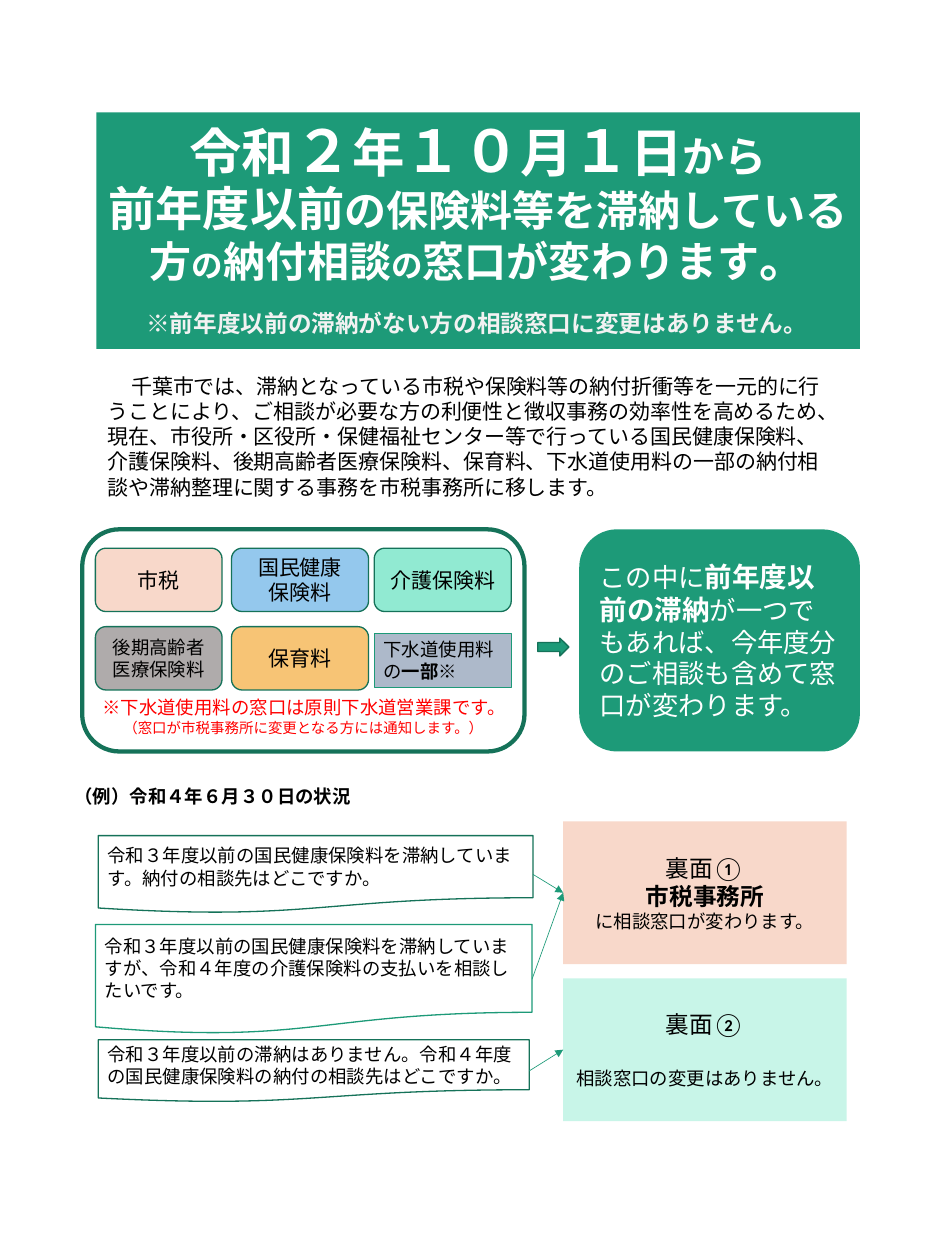
import pptx
import pptx.util
import pptx.dml.color
import pptx.enum.dml
import pptx.enum.lang
import pptx.enum.shapes
import pptx.enum.text
import pptx.oxml.ns
import lxml.etree

Pt = pptx.util.Pt
SHAPE = pptx.enum.shapes.MSO_SHAPE
ANCHOR = pptx.enum.text.MSO_ANCHOR
ALIGN = pptx.enum.text.PP_ALIGN
qn = pptx.oxml.ns.qn
COLORS = {
    "green": "1D9A78", "dark": "157259", "white": "FFFFFF", "black": "000000",
    "pale": "F2F2F2", "red": "FF0000", "peach": "F8D8CA", "blue": "94C8ED",
    "mint": "91EAD2", "gray": "AFABAB", "amber": "F7C475", "slate": "ADB9CA",
    "ice": "C8F5E8",
}

deck = pptx.Presentation()
deck.slide_width = pptx.util.Inches(10)
deck.slide_height = pptx.util.Inches(13.33)
cell = deck.slide_width / 100
slide = deck.slides.add_slide(deck.slide_layouts[5])


def rgb(name):
    return pptx.dml.color.RGBColor.from_string(COLORS[name])


def write(holder, paragraphs, color="black", font="Calibri", align=ALIGN.LEFT,
          anchor=ANCHOR.MIDDLE, wrap=True, spacing=None, gap=0, bottom=0.5):
    frame = holder.text_frame
    frame.word_wrap = wrap
    frame.auto_size = pptx.enum.text.MSO_AUTO_SIZE.NONE
    frame.vertical_anchor = anchor
    frame.margin_left = frame.margin_right = round(cell)
    frame.margin_top = round(cell / 2)
    frame.margin_bottom = round(bottom * cell)
    for index, runs in enumerate(paragraphs):
        paragraph = frame.add_paragraph() if index else frame.paragraphs[0]
        paragraph.alignment = align
        if spacing:
            paragraph.line_spacing = spacing
        if index and gap:
            paragraph.space_before = Pt(gap)
        for text, size, bold in runs:
            if text == "\n":
                paragraph.add_line_break()
                continue
            run = paragraph.add_run()
            run.text = text
            run.font.size = Pt(size)
            run.font.bold = bold
            run.font.color.rgb = rgb(color)
            run.font.name = font
            run.font.language_id = pptx.enum.lang.MSO_LANGUAGE_ID.JAPANESE
            east_asian = lxml.etree.SubElement(run.font._element, qn("a:ea"))
            east_asian.set("typeface", "Calibri")
    return frame


def place(kind, box, fill=None, line=None, weight=1):
    shape = slide.shapes.add_shape(kind, *[round(n * cell) for n in box])
    shape.shadow.inherit = False
    if fill:
        shape.fill.solid()
        shape.fill.fore_color.rgb = rgb(fill)
    else:
        shape.fill.background()
    if line:
        shape.line.color.rgb = rgb(line)
        shape.line.width = Pt(weight)
    else:
        shape.line.fill.background()
    return shape


headline = slide.shapes.title
headline.left, headline.top, headline.width, headline.height = [
    round(n * cell) for n in (10.2, 11.9, 80.8, 25)]
headline.fill.solid()
headline.fill.fore_color.rgb = rgb("green")
write(headline, [[
    ("令和", 40, True), ("２", 44, True), ("年", 40, True), ("１０", 44, True),
    ("月", 40, True), ("１", 44, True), ("日", 40, True), ("から", 32, True),
    ("\n", 32, True), ("前年度以前", 36, True),
    ("の保険料等を滞納している方", 32, True), ("の", 24, True),
    ("納付相談", 32, True), ("の", 24, True), ("窓口が変わります", 32, True),
    ("。", 36, True),
]], color="white", font="Noto Sans CJK JP", align=ALIGN.CENTER,
    anchor=ANCHOR.BOTTOM, spacing=0.9, bottom=6.5)

lead = slide.shapes.add_textbox(*[round(n * cell) for n in (10.4, 39, 79.3, 14.8)])
lead_frame = write(lead, [[(
    "千葉市では、滞納となっている市税や保険料等の納付折衝等を一元的に行うことにより、"
    "ご相談が必要な方の利便性と徴収事務の効率性を高めるため、"
    "現在、市役所・区役所・保健福祉センター等で行っている国民健康保険料、介護保険料、"
    "後期高齢者医療保険料、保育料、下水道使用料の一部の納付相談や"
    "滞納整理に関する事務を市税事務所に移します。", 16, False)]], anchor=ANCHOR.TOP)
lead_frame.paragraphs[0]._p.get_or_add_pPr().set("indent", str(Pt(18)))

fees = place(SHAPE.FLOWCHART_ALTERNATE_PROCESS, (8.7, 56, 46.8, 23.5),
             line="dark", weight=3.25)
fees_frame = write(fees, [
    [("※", 14, True), ("下水道使用料の窓口は原則下水道営業課です。", 14, False)],
    [("（窓口が市税事務所に変更となる方には通知します。）", 11, False)],
], color="red", anchor=ANCHOR.BOTTOM)
fees_frame.paragraphs[1]._p.get_or_add_pPr().set("marL", str(Pt(16)))

fee_columns = [(10.1, 13.4), (24.5, 14.5), (39.6, 14.5)]
fee_rows = [58, 66.3]
fee_tiles = [
    (0, 0, "peach", 16, ["市税"]),
    (1, 0, "blue", 16, ["国民健康", "保険料"]),
    (2, 0, "mint", 16, ["介護保険料"]),
    (0, 1, "gray", 14, ["後期高齢者", "医療保険料"]),
    (1, 1, "amber", 16, ["保育料"]),
]
for column, row, fill, size, lines in fee_tiles:
    left, width = fee_columns[column]
    tile = place(SHAPE.FLOWCHART_ALTERNATE_PROCESS,
                 (left, fee_rows[row], width, 6.7), fill, "dark")
    write(tile, [[(line, size, False)] for line in lines], align=ALIGN.CENTER)

sewerage = place(SHAPE.RECTANGLE, (39.6, 67, 14.5, 5.7), "slate", "green", 0.75)
write(sewerage, [[("下水道使用料の", 14, False), ("一部※", 14, True)]],
      anchor=ANCHOR.TOP)

place(SHAPE.RIGHT_ARROW, (56.9, 67.5, 3.3, 1.9), "green", "dark")

outcome = place(SHAPE.ROUNDED_RECTANGULAR_CALLOUT, (61.3, 56, 29.7, 23.5), "green")
for index, value in enumerate((-0.5, 0.02, 0.17)):
    outcome.adjustments[index] = value
write(outcome, [[
    ("この中に", 20, False), ("前年度以前の滞納", 21, True),
    ("が一つでもあれば、今年度分のご相談も含めて窓口が変わります。", 20, False),
]], color="white", font="Noto Sans CJK JP")

captions = [
    ((14.5, 32.2, 75.2, 4), 18, "pale",
     "※前年度以前の滞納がない方の相談窓口に変更はありません。"),
    ((6.9, 82.6, 31.5, 3.4), 14, "black", "（例）令和４年６月３０日の状況"),
]
for box, size, color, text in captions:
    caption = slide.shapes.add_textbox(*[round(n * cell) for n in box])
    write(caption, [[(text, size, True)]], color=color, anchor=ANCHOR.TOP, wrap=False)

answers = []
for top, fill, gap, lines in [
    (86.9, "peach", 0, [("裏面①", 18, False), ("市税事務所", 18, True),
                        ("に相談窓口が変わります。", 14, False)]),
    (103.5, "ice", 22, [("裏面②", 18, False),
                        ("相談窓口の変更はありません。", 14, False)]),
]:
    answer = place(SHAPE.RECTANGLE, (59.6, top, 30, 15.1), fill)
    write(answer, [[line] for line in lines], align=ALIGN.CENTER, gap=gap)
    answers.append(answer)

questions = [
    ((10.4, 88.4, 46, 8.2), None, "dark", 0,
     "令和３年度以前の国民健康保険料を滞納しています。納付の相談先はどこですか。"),
    ((10.1, 97.8, 46.2, 11.6), "white", "green", 0,
     "令和３年度以前の国民健康保険料を滞納していますが、"
     "令和４年度の介護保険料の支払いを相談したいです。"),
    ((10.4, 110, 45.6, 6.6), None, "dark", 1,
     "令和３年度以前の滞納はありません。"
     "令和４年度の国民健康保険料の納付の相談先はどこですか。"),
]
for box, fill, line, target, text in questions:
    question = place(SHAPE.FLOWCHART_DOCUMENT, box, fill, line)
    write(question, [[(text, 14, False)]])
    route = slide.shapes.add_connector(
        pptx.enum.shapes.MSO_CONNECTOR.STRAIGHT, 0, 0, 0, 0)
    route.begin_connect(question, 3)
    route.end_connect(answers[target], 1)
    route.line.color.rgb = rgb("green")
    route.line.width = Pt(0.5)
    lxml.etree.SubElement(route.line._get_or_add_ln(), qn("a:tailEnd")).set("type", "triangle")
    lxml.etree.SubElement(route._element.spPr, qn("a:effectLst"))

deck.save("out.pptx")
